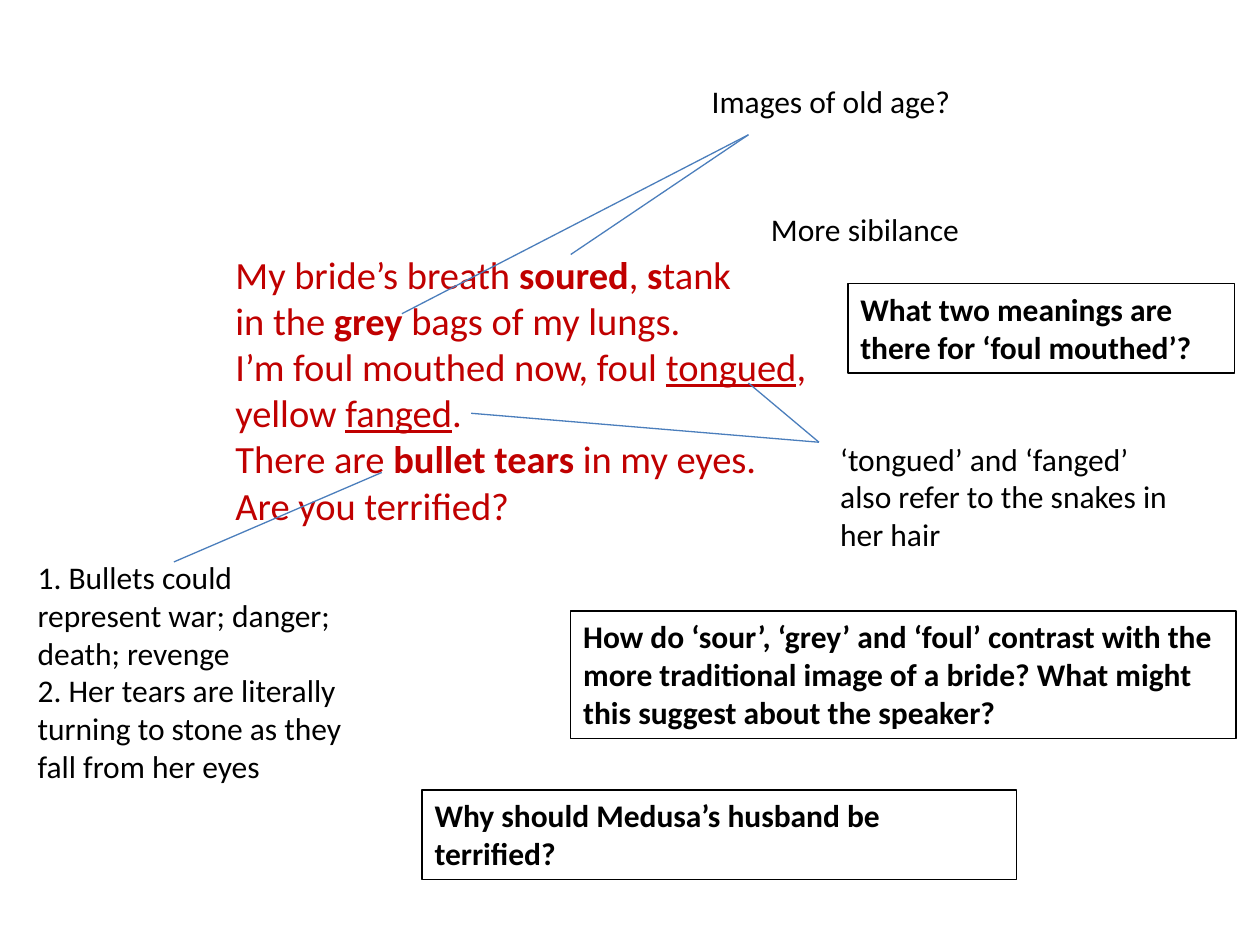
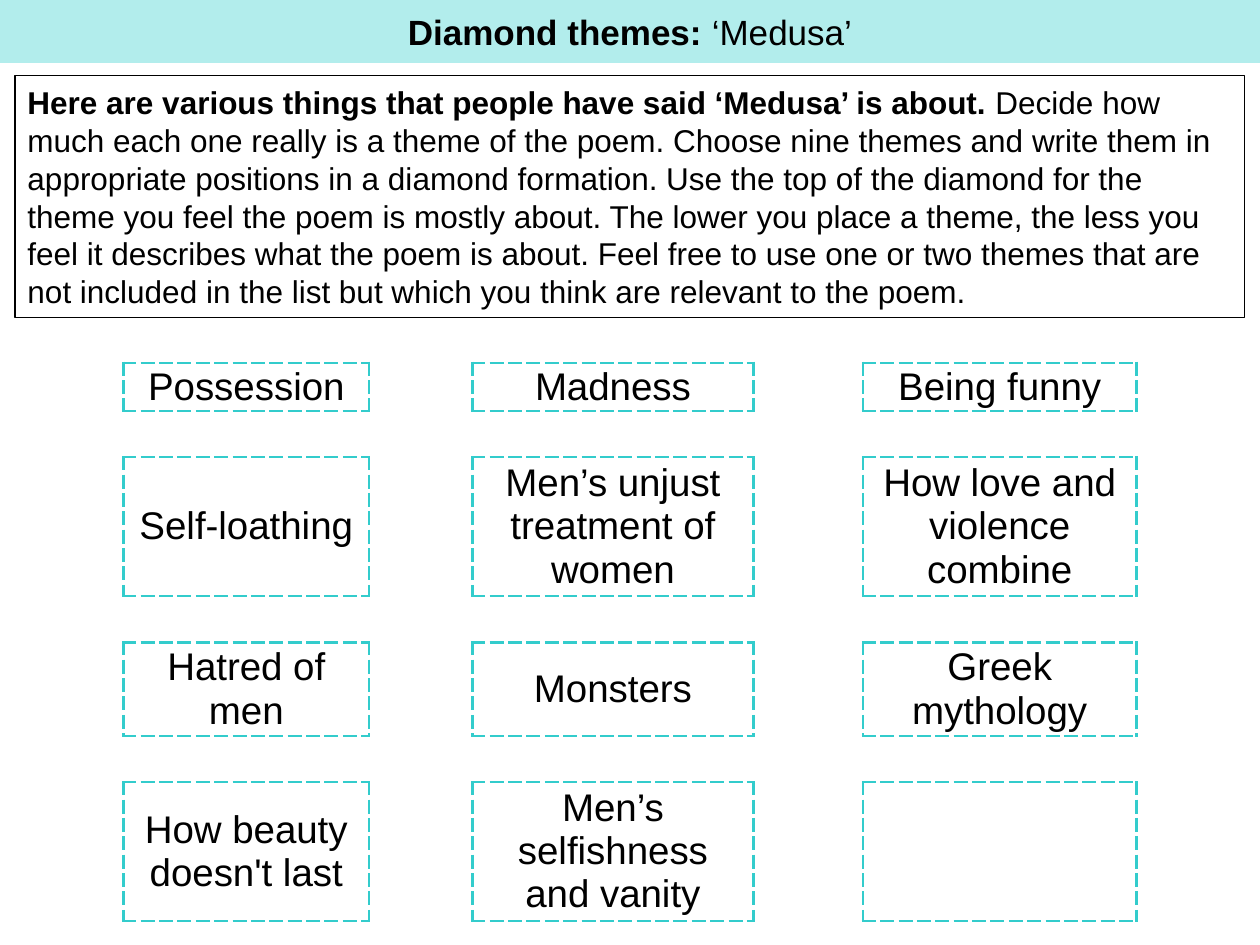
"""Build two lesson slides on the poem 'Medusa': annotated lines and diamond themes."""
from dataclasses import dataclass

from lxml import etree
from pptx import Presentation
from pptx.dml.color import RGBColor
from pptx.enum.shapes import MSO_CONNECTOR
from pptx.enum.text import MSO_ANCHOR, MSO_AUTO_SIZE, PP_ALIGN
from pptx.oxml.ns import qn
from pptx.util import Inches, Pt

STRAIGHT = MSO_CONNECTOR.STRAIGHT
MIDDLE, TOP = MSO_ANCHOR.MIDDLE, MSO_ANCHOR.TOP
CENTER, LEFT = PP_ALIGN.CENTER, PP_ALIGN.LEFT
FIT_SHAPE, FIXED = MSO_AUTO_SIZE.SHAPE_TO_FIT_TEXT, MSO_AUTO_SIZE.NONE
TITLE_ONLY, BLANK = 5, 6
NO_STYLE_NO_GRID = "{2D5ABB26-0587-4C30-8999-92F81FD0307C}"


@dataclass(frozen=True)
class Theme:
    """Colours, fonts, type sizes and line widths of the lesson."""

    ink: str = "000000"
    poem: str = "C00000"
    pointer: str = "4B7EBC"
    band: str = "B2EDEC"
    card: str = "33CCCC"
    note_font: str = "Calibri"
    theme_font: str = "Arial"
    poem_size: int = 22
    note_size: int = 18
    title_size: int = 20
    card_size: int = 22
    thin: float = 0.75
    card_line: float = 1.5


THEME = Theme()
BOLD, UNDERLINED = {"bold": True}, {"underline": True}

POEM = [
    [("My bride’s breath ", {}), ("soured", BOLD), (", ", {}), ("s", BOLD), ("tank", {})],
    [("in the ", {}), ("grey", BOLD), (" bags of my lungs.", {})],
    [("I’m foul mouthed now, foul ", {}), ("tongued", UNDERLINED), (",", {})],
    [("yellow ", {}), ("fanged", UNDERLINED), (".", {})],
    [("There are ", {}), ("bullet tears ", BOLD), ("in my eyes.", {})],
    [("Are you terrified?", {})],
]
NOTES = [
    ((5.55, 0.6, 3.86, 0.4), ["Images of old age?"]),
    ((6.02, 1.62, 3.39, 0.4), ["More sibilance"]),
    ((0.2, 4.38, 2.72, 1.92), [
        "1. Bullets could represent war; danger; death; revenge",
        "2. Her tears are literally turning to stone as they fall from her eyes",
    ]),
    ((6.57, 3.44, 2.83, 1.01),
     ["‘tongued’ and ‘fanged’ also refer to the snakes in her hair"]),
]
QUESTIONS = [
    ((4.53, 4.85, 5.28, 1.01),
     "How do ‘sour’, ‘grey’ and ‘foul’ contrast with the more traditional image "
     "of a bride? What might this suggest about the speaker?"),
    ((6.73, 2.25, 3.07, 0.71), "What two meanings are there for ‘foul mouthed’?"),
    ((3.35, 6.27, 4.72, 0.71), "Why should Medusa’s husband be terrified?"),
]
OLD_AGE, SNAKES = (5.94, 1.07), (6.5, 3.51)
POINTERS = [
    ((4.53, 2.02), OLD_AGE),
    ((3.19, 2.49), OLD_AGE),
    ((3.03, 3.75), (1.38, 4.46)),
    (SNAKES, (5.94, 3.04)),
    ((3.74, 3.28), SNAKES),
]

TITLE = [[("Diamond themes: ", BOLD), ("‘Medusa’", {})]]
INSTRUCTIONS = [[
    ("Here are various things that people have said ‘Medusa’ is about. ", BOLD),
    ("Decide how much each one really is a theme of the poem. Choose nine themes and "
     "write them in appropriate positions in a diamond formation. Use the top of the "
     "diamond for the theme you feel the poem is mostly about. The lower you place a "
     "theme, the less you feel it describes what the poem is about. Feel free to use "
     "one or two themes that are not included in the list but which you think are "
     "relevant to the poem.", {}),
]]
POEM_THEMES = [
    ["Possession", "Madness", "Being funny"],
    ["Self-loathing", "Men’s unjust treatment of women", "How love and violence combine"],
    ["Hatred of men", "Monsters", "Greek mythology"],
    ["How beauty doesn't last", "Men’s selfishness and vanity", ""],
]
COLUMN_WIDTHS = [1.95, 0.82, 2.23, 0.87, 2.17]
ROW_HEIGHTS = [0.38, 0.37, 1.1, 0.37, 0.74, 0.37, 1.1]


def set_attributes(target, values):
    """Set each named attribute of the target."""
    for name, value in values.items():
        setattr(target, name, value)


def write_text(frame, paragraphs, font, size, color=THEME.ink, alignment=LEFT):
    """Fill a text frame with paragraphs made of (text, format) runs."""
    for index, runs in enumerate(paragraphs):
        paragraph = frame.add_paragraph() if index else frame.paragraphs[0]
        paragraph.alignment = alignment
        for text, style in runs:
            run = paragraph.add_run()
            run.text = text
            set_attributes(run.font, {"name": font, "size": Pt(size), "bold": False, **style})
            run.font.color.rgb = RGBColor.from_string(color)


def add_text(slide, box, paragraphs, font=THEME.note_font, size=THEME.note_size,
             color=THEME.ink, anchor=TOP, framed=False):
    """Add a wrapping text box, with a thin frame if asked."""
    shape = slide.shapes.add_textbox(*map(Inches, box))
    set_attributes(shape.text_frame, {
        "word_wrap": True, "auto_size": FIT_SHAPE, "vertical_anchor": anchor})
    if framed:
        shape.line.color.rgb = RGBColor.from_string(THEME.ink)
        shape.line.width = Pt(THEME.thin)
    write_text(shape.text_frame, paragraphs, font, size, color)


def add_pointer(slide, start, end):
    """Add a thin straight line between two points."""
    connector = slide.shapes.add_connector(STRAIGHT, *map(Inches, start + end))
    connector.line.color.rgb = RGBColor.from_string(THEME.pointer)
    connector.line.width = Pt(THEME.thin)
    etree.SubElement(connector._element.spPr, qn("a:effectLst"))


def add_title_band(slide, paragraphs):
    """Turn the title placeholder into a coloured band across the top."""
    title = slide.shapes.title
    set_attributes(title, {
        "left": 0, "top": 0, "width": Inches(10), "height": Inches(0.5)})
    title.fill.solid()
    title.fill.fore_color.rgb = RGBColor.from_string(THEME.band)
    set_attributes(title.text_frame, {
        "word_wrap": True, "auto_size": FIXED, "vertical_anchor": MIDDLE})
    write_text(title.text_frame, paragraphs, THEME.theme_font, THEME.title_size,
               alignment=CENTER)


def add_border(cell, side, visible):
    """Give one side of a cell a dashed line or none."""
    line = etree.SubElement(cell._tc.get_or_add_tcPr(), qn(f"a:ln{side}"),
                            w=str(Pt(THEME.card_line)))
    if not visible:
        etree.SubElement(line, qn("a:noFill"))
        return
    fill = etree.SubElement(line, qn("a:solidFill"))
    etree.SubElement(fill, qn("a:srgbClr"), val=THEME.card)
    etree.SubElement(line, qn("a:prstDash"), val="dash")


def add_theme_cards(slide, cards):
    """Lay out cards in a table whose odd rows and columns are gaps."""
    frame = slide.shapes.add_table(
        len(ROW_HEIGHTS), len(COLUMN_WIDTHS), Inches(0.98), Inches(2.88),
        Inches(sum(COLUMN_WIDTHS)), Inches(sum(ROW_HEIGHTS)))
    table = frame.table
    set_attributes(table, {"first_row": False, "horz_banding": False})
    table._tbl.tblPr.find(qn("a:tableStyleId")).text = NO_STYLE_NO_GRID
    for column, width in zip(table.columns, COLUMN_WIDTHS):
        column.width = Inches(width)
    for row_index, (row, height) in enumerate(zip(table.rows, ROW_HEIGHTS)):
        row.height = Inches(height)
        for column_index, cell in enumerate(row.cells):
            card_row, card_column = row_index % 2 == 0, column_index % 2 == 0
            for side in "LRTB":
                add_border(cell, side, card_row if side in "LR" else card_column)
            cell.fill.background()
            set_attributes(cell, {
                "margin_left": Inches(0.07), "margin_right": Inches(0.07),
                "margin_top": 0, "margin_bottom": 0, "vertical_anchor": MIDDLE})
            text = cards[row_index // 2][column_index // 2] if card_row and card_column else ""
            if text:
                write_text(cell.text_frame, [[(text, {})]], THEME.theme_font,
                           THEME.card_size, alignment=CENTER)


def build_annotated_poem(presentation):
    """Build the slide of poem lines with notes and questions."""
    slide = presentation.slides.add_slide(presentation.slide_layouts[BLANK])
    add_text(slide, (1.77, 1.94, 6.69, 2.32), POEM, size=THEME.poem_size, color=THEME.poem)
    for box, lines in NOTES:
        add_text(slide, box, [[(line, {})] for line in lines])
    for box, question in QUESTIONS:
        add_text(slide, box, [[(question, BOLD)]], framed=True)
    for start, end in POINTERS:
        add_pointer(slide, start, end)


def build_diamond_themes(presentation):
    """Build the slide of themes to rank in a diamond."""
    slide = presentation.slides.add_slide(presentation.slide_layouts[TITLE_ONLY])
    add_title_band(slide, TITLE)
    add_theme_cards(slide, POEM_THEMES)
    add_text(slide, (0.12, 0.6, 9.76, 1.92), INSTRUCTIONS, font=THEME.theme_font,
             anchor=MIDDLE, framed=True)


def main():
    """Create and save the presentation."""
    presentation = Presentation()
    set_attributes(presentation, {"slide_width": Inches(10), "slide_height": Inches(7.5)})
    build_annotated_poem(presentation)
    build_diamond_themes(presentation)
    presentation.save("out.pptx")


if __name__ == "__main__":
    main()
